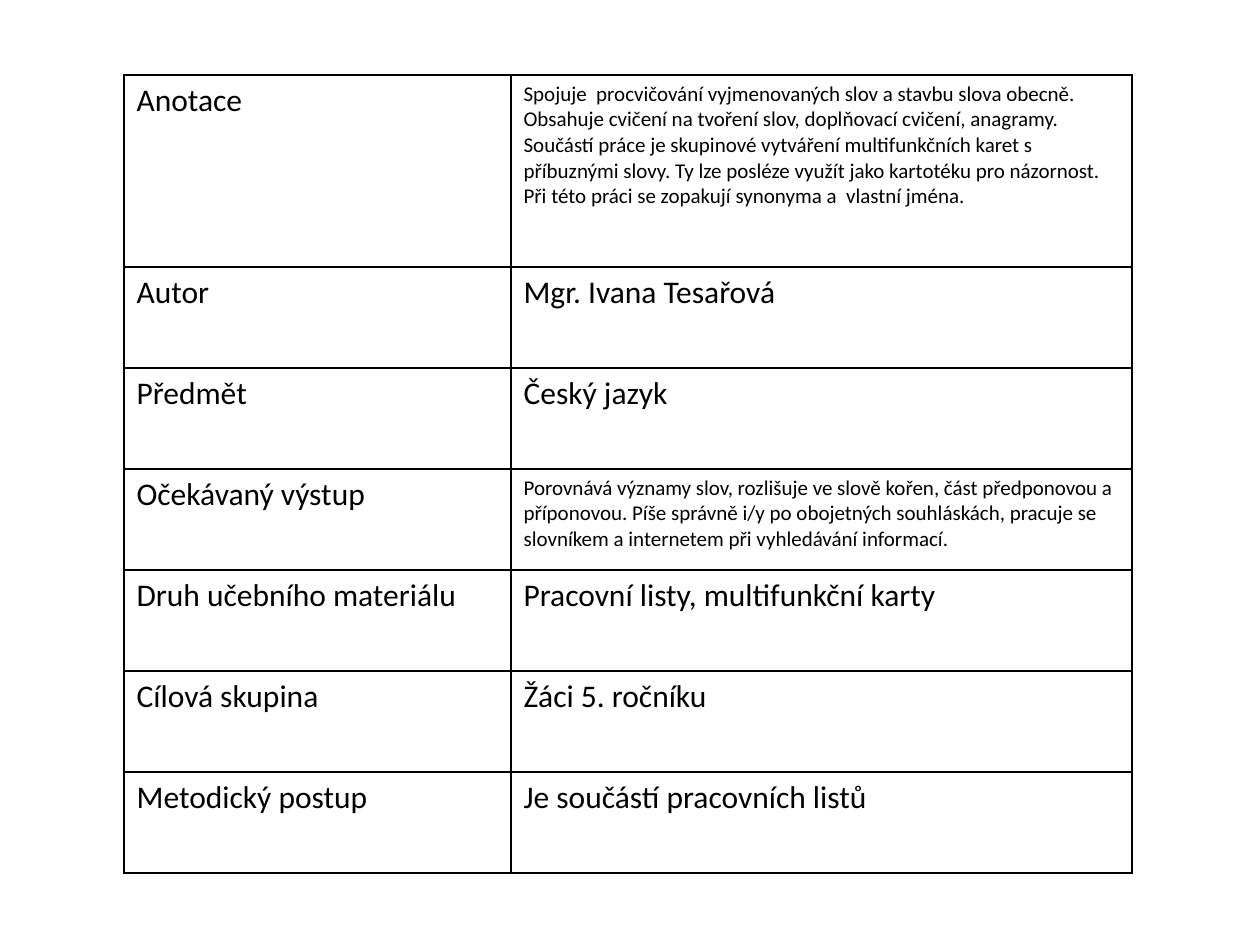
"""Build a slide with an annotation table for a Czech language teaching material."""
from lxml import etree
from pptx import Presentation
from pptx.dml.color import RGBColor
from pptx.oxml.ns import qn
from pptx.util import Pt

ENTRIES = [
    ("Anotace", [
        "Spojuje  procvičování vyjmenovaných slov a stavbu slova obecně.",
        "Obsahuje cvičení na tvoření slov, doplňovací cvičení, anagramy.",
        "Součástí práce je skupinové vytváření multifunkčních karet s příbuznými slovy. "
        "Ty lze posléze využít jako kartotéku pro názornost. "
        "Při této práci se zopakují synonyma a  vlastní jména.",
    ], 12),
    ("Autor", ["Mgr. Ivana Tesařová"], 18),
    ("Předmět", ["Český jazyk"], 18),
    ("Očekávaný výstup", [
        "Porovnává významy slov, rozlišuje ve slově kořen, část předponovou a příponovou. "
        "Píše správně i/y po obojetných souhláskách, pracuje se slovníkem a internetem "
        "při vyhledávání informací.",
    ], 12),
    ("Druh učebního materiálu", ["Pracovní listy, multifunkční karty"], 18),
    ("Cílová skupina", ["Žáci 5. ročníku"], 18),
    ("Metodický postup", ["Je součástí pracovních listů"], 18),
]
LABEL_SIZE = 18
INK = "000000"
LEFT, TOP = 124, 75
COLUMNS = [387, 621]
ROWS = [192] + [101] * (len(ENTRIES) - 1)


def px(length):
    return round(length * 914400 / 126)


def color(value):
    return RGBColor.from_string(value)


def add_borders(cell):
    properties = cell._tc.get_or_add_tcPr()
    for position, side in enumerate(("lnL", "lnR", "lnT", "lnB")):
        border = etree.Element(qn(f"a:{side}"), w=str(Pt(1)))
        fill = etree.SubElement(border, qn("a:solidFill"))
        etree.SubElement(fill, qn("a:srgbClr"), val=INK)
        properties.insert(position, border)


def write(cell, lines, size):
    cell.fill.background()
    add_borders(cell)
    cell.text = "\n".join(lines)
    for line in cell.text_frame.paragraphs:
        font = line.runs[0].font
        for name, value in {"name": "Calibri", "size": Pt(size), "bold": False}.items():
            setattr(font, name, value)
        font.color.rgb = color(INK)


def main():
    deck = Presentation()
    deck.slide_width, deck.slide_height = px(1260), px(945)
    slide = deck.slides.add_slide(deck.slide_layouts[6])
    annotation = slide.shapes.add_table(
        len(ROWS), len(COLUMNS), px(LEFT), px(TOP), px(sum(COLUMNS)), px(sum(ROWS))).table
    annotation.first_row = annotation.horz_banding = False
    for column, width in zip(annotation.columns, COLUMNS):
        column.width = px(width)
    for row, height, (label, lines, size) in zip(annotation.rows, ROWS, ENTRIES):
        row.height = px(height)
        write(row.cells[0], [label], LABEL_SIZE)
        write(row.cells[1], lines, size)
    deck.save("out.pptx")


if __name__ == "__main__":
    main()
